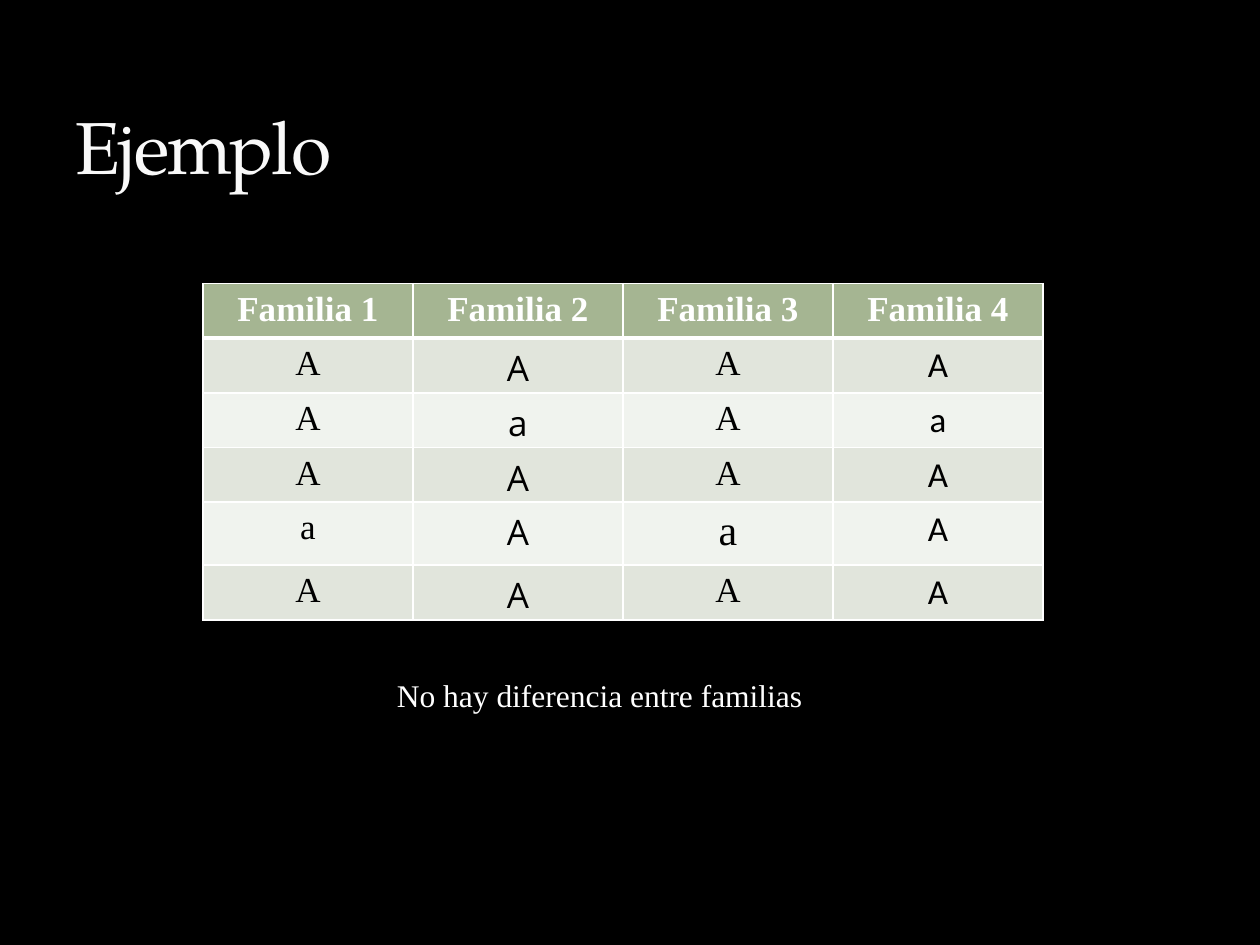
"""Build the slide that compares alleles across four families."""
from pptx import Presentation
from pptx.dml.color import RGBColor
from pptx.enum import text
from pptx.oxml import parse_xml
from pptx.oxml.ns import nsdecls
from pptx.util import Pt

HUES = {"back": "000000", "title": "F9F9F9", "white": "FFFFFF", "ink": "000000",
        "head": "A5B592", "odd": "E1E5DC", "even": "F0F3EE"}
SERIF = "Times New Roman"
FACES = [SERIF, "Open Sans", SERIF, "Calibri"]
ROWS = [[f"Familia {n}" for n in range(1, 5)],
        list("AAAA"), list("AaAa"), list("AAAA"), list("aAaA"), list("AAAA")]


def style(para, face, size, hue, bold=False):
    font = para.font
    font.name, font.size, font.bold = face, Pt(size), bold
    font.color.rgb = RGBColor.from_string(HUES[hue])


def border(cell, side, width):
    cell._tc.get_or_add_tcPr().append(parse_xml(
        f'<a:{side} {nsdecls("a")} w="{Pt(width)}"><a:solidFill>'
        f'<a:srgbClr val="{HUES["white"]}"/></a:solidFill></a:{side}>'))


deck = Presentation()
deck.slide_width, deck.slide_height = Pt(720), Pt(540)
slide = deck.slides.add_slide(deck.slide_layouts[6])
slide.background.fill.solid()
slide.background.fill.fore_color.rgb = RGBColor.from_string(HUES["back"])

title = slide.shapes.add_textbox(Pt(36), Pt(12), Pt(648), Pt(96)).text_frame
title.word_wrap = True
title.vertical_anchor = text.MSO_ANCHOR.BOTTOM
title.margin_bottom = 0
title.text = "Ejemplo"
style(title.paragraphs[0], "TeX Gyre Pagella", 42, "title")
title.paragraphs[0].runs[0].font._element.set("spc", "-100")

table = slide.shapes.add_table(6, 4, Pt(116), Pt(162), Pt(480), Pt(175.2)).table
for r, row in enumerate(ROWS):
    for c, word in enumerate(row):
        cell = table.cell(r, c)
        cell.text = word
        para = cell.text_frame.paragraphs[0]
        para.alignment = text.PP_ALIGN.CENTER
        if r == 0:
            style(para, SERIF, 20, "white", True)
        else:
            style(para, FACES[c], 24 if (r, c) == (4, 2) else 20, "ink")
        for side in ("lnL", "lnR", "lnT", "lnB"):
            thick = (r, side) in ((0, "lnB"), (1, "lnT"))
            border(cell, side, 3 if thick else 1)
        cell.fill.solid()
        hue = "head" if r == 0 else "odd" if r % 2 else "even"
        cell.fill.fore_color.rgb = RGBColor.from_string(HUES[hue])

note = slide.shapes.add_textbox(Pt(184), Pt(383), Pt(317.5), Pt(29)).text_frame
note.word_wrap = True
note.auto_size = text.MSO_AUTO_SIZE.SHAPE_TO_FIT_TEXT
note.text = "No hay diferencia entre familias"
note.paragraphs[0].alignment = text.PP_ALIGN.CENTER
style(note.paragraphs[0], SERIF, 18, "white")

deck.save("out.pptx")
